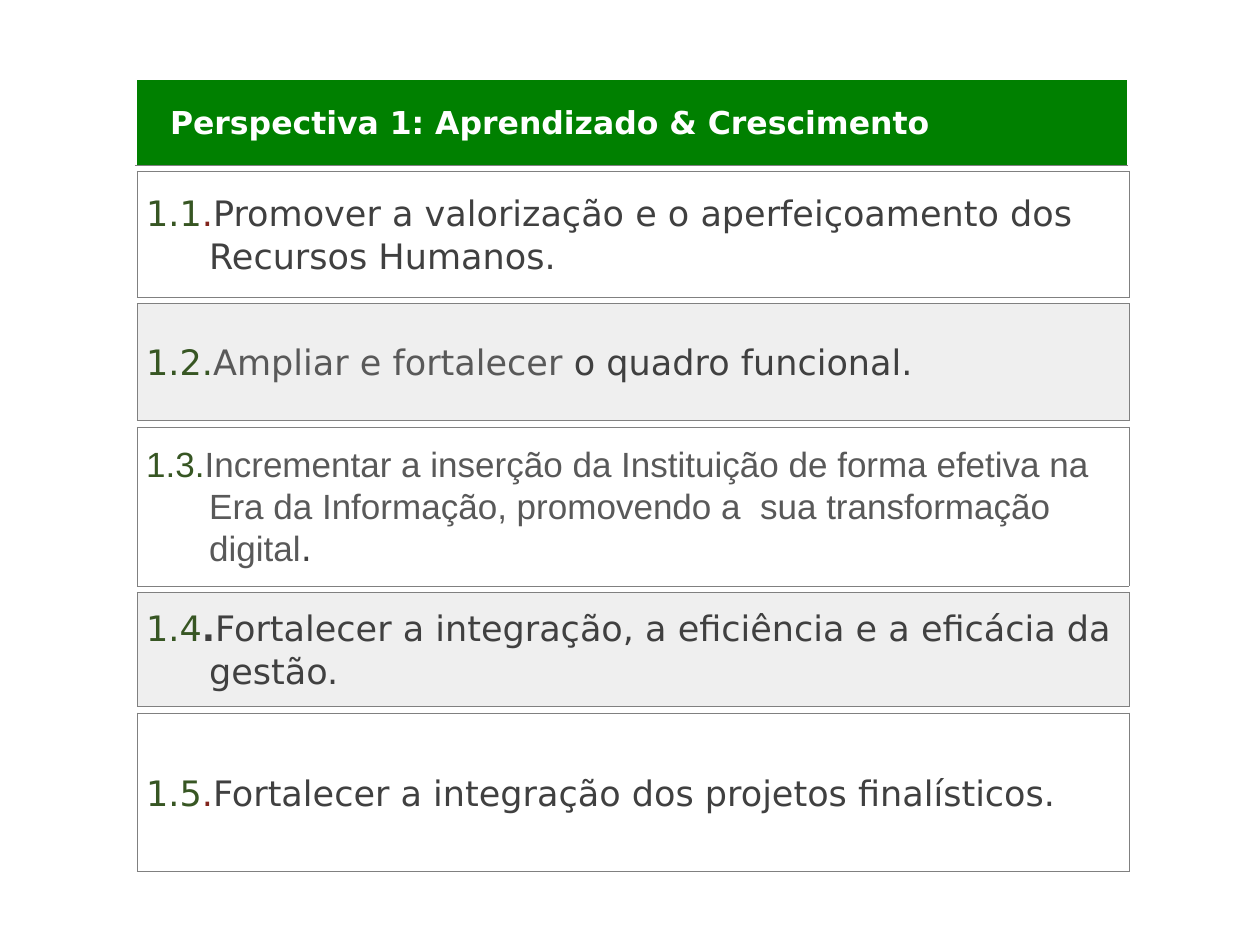
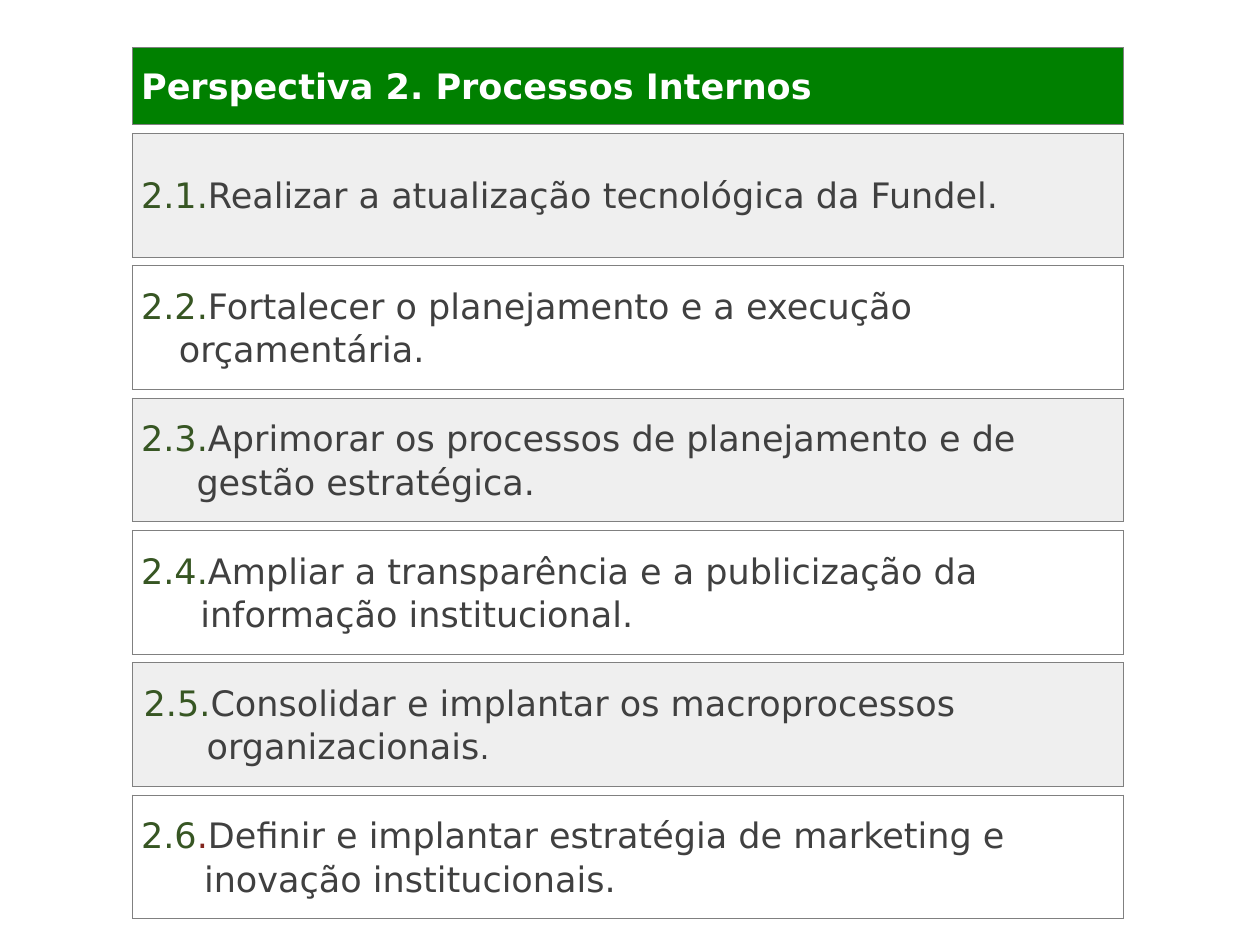
from lxml import etree
from pptx import Presentation
from pptx.dml.color import RGBColor
from pptx.enum.text import MSO_ANCHOR
from pptx.oxml.ns import qn
from pptx.util import Inches, Pt

MIDDLE = MSO_ANCHOR.MIDDLE
COLORS = {
    "header": "008000",
    "band": "D9D9D9",
    "white": "FFFFFF",
    "border": "808080",
    "number": "375623",
    "red": "82251D",
    "text": "404040",
    "soft": "595959",
}
FONT = "DejaVu Sans"
NUMBER_FONT = "Arial"
BAND_ALPHA = 40
BAR_WIDTH = 7.87
BORDER = ("border", 0.5)
GRID = {"L": BORDER, "R": BORDER, "T": BORDER, "B": BORDER}
WHITE_EDGE = ("white", 1)


def add_borders(cell, borders):
    properties = cell._tc.get_or_add_tcPr()
    for side, (color, width) in borders.items():
        line = etree.SubElement(properties, qn("a:ln" + side), w=str(Pt(width)))
        fill = etree.SubElement(line, qn("a:solidFill"))
        etree.SubElement(fill, qn("a:srgbClr"), val=COLORS[color])


def add_bar(slide, left, top, height, runs, indent, fill=None, borders=GRID):
    """Add a one-cell table; a run is (text, color, formatting that differs)."""
    table = slide.shapes.add_table(
        1, 1, Inches(left), Inches(top), Inches(BAR_WIDTH), Inches(height)).table
    table.first_row = False
    table.horz_banding = False
    cell = table.cell(0, 0)
    cell.vertical_anchor = MIDDLE
    cell.margin_left = cell.margin_right = Inches(0.07)
    cell.margin_top = cell.margin_bottom = 0
    add_borders(cell, borders)

    if fill:
        cell.fill.solid()
        cell.fill.fore_color.rgb = RGBColor.from_string(COLORS[fill])
    else:
        cell.fill.background()
    if fill == "band":
        color = cell._tc.tcPr.find(qn("a:solidFill")).find(qn("a:srgbClr"))
        etree.SubElement(color, qn("a:alpha"), val=str(BAND_ALPHA * 1000))

    paragraph = cell.text_frame.paragraphs[0]
    paragraph.line_spacing = 1.07
    margin, first_line = indent
    paragraph_properties = paragraph._p.get_or_add_pPr()
    paragraph_properties.set("marL", str(Inches(margin)))
    paragraph_properties.set("indent", str(Inches(first_line)))
    for text, color, style in runs:
        run = paragraph.add_run()
        run.text = text
        run.font.name = style.get("font", FONT)
        run.font.size = Pt(style.get("size", 20))
        run.font.bold = style.get("bold", False)
        run.font.color.rgb = RGBColor.from_string(COLORS[color])


PLAIN = {}
BOLD = {"bold": True}
ARIAL = {"font": NUMBER_FONT}

# Each goal: height, hanging indent, runs after the number
perspectives = [
    {
        "title": "Perspectiva 1: Aprendizado & Crescimento",
        "title_size": 18,
        "title_indent": (0, 0.2),
        "title_box": (1.08, 0.63, 0.68),
        "title_borders": {"L": WHITE_EDGE, "R": WHITE_EDGE, "T": WHITE_EDGE, "B": BORDER},
        "left": 1.09,
        "top": 1.36,
        "gap": 0.05,
        "first_band": 1,
        "goals": [
            (1.0, (0.5, -0.5), [
                ("1.1", "number", PLAIN), (".", "red", PLAIN),
                ("Promover a valorização e o aperfeiçoamento dos Recursos Humanos.",
                 "text", PLAIN)]),
            (0.93, (0.32, -0.32), [
                ("1.2.", "number", PLAIN), ("Ampliar e fortalecer ", "soft", PLAIN),
                ("o quadro funcional.", "text", PLAIN)]),
            (1.26, (0.5, -0.5), [
                ("1.3.", "number", ARIAL),
                ("Incrementar a inserção da Instituição de forma efetiva na Era da "
                 "Informação, promovendo a  sua transformação digital", "soft", ARIAL),
                (".", "text", PLAIN)]),
            (0.91, (0.5, -0.5), [
                ("1.4", "number", PLAIN), (".", "text", BOLD),
                ("Fortalecer a integração, a eficiência e a eficácia da gestão.",
                 "text", PLAIN)]),
            (1.26, (0.33, -0.33), [
                ("1.5", "number", PLAIN), (".", "red", PLAIN),
                ("Fortalecer a integração dos projetos finalísticos.", "text", PLAIN)]),
        ],
    },
    {
        "title": "Perspectiva 2. Processos Internos",
        "title_size": 20,
        "title_indent": (0, 0),
        "title_box": (1.05, 0.38, 0.61),
        "title_borders": GRID,
        "left": 1.05,
        "top": 1.06,
        "gap": 0.07,
        "first_band": 0,
        "goals": [
            (0.98, (0.5, -0.5), [
                ("2.1.", "number", PLAIN),
                ("Realizar a atualização tecnológica da Fundel.", "text", PLAIN)]),
            (0.98, (0.3, -0.3), [
                ("2.2.", "number", PLAIN),
                ("Fortalecer o planejamento e a execução orçamentária.", "text", PLAIN)]),
            (0.98, (0.44, -0.44), [
                ("2.3.", "number", PLAIN),
                ("Aprimorar os processos de planejamento e de gestão estratégica.",
                 "text", PLAIN)]),
            (0.98, (0.47, -0.47), [
                ("2.4.", "number", PLAIN),
                ("Ampliar a transparência e a publicização da informação institucional.",
                 "text", PLAIN)]),
            (0.98, (0.52, -0.5), [
                ("2.5.", "number", PLAIN),
                ("Consolidar e implantar os macroprocessos organizacionais", "text", PLAIN),
                (".", "text", {"size": 18})]),
            (0.98, (0.5, -0.5), [
                ("2.6", "number", PLAIN), (".", "red", PLAIN),
                ("Definir e implantar estratégia de marketing e inovação institucionais.",
                 "text", PLAIN)]),
        ],
    },
]

presentation = Presentation()
presentation.slide_width = Inches(10)
presentation.slide_height = Inches(7.5)
blank_layout = presentation.slide_layouts[6]

for perspective in perspectives:
    slide = presentation.slides.add_slide(blank_layout)

    # Green title bar
    left, top, height = perspective["title_box"]
    title_style = {"size": perspective["title_size"], "bold": True}
    add_bar(slide, left, top, height, [(perspective["title"], "white", title_style)],
            perspective["title_indent"], "header", perspective["title_borders"])

    # Goals stacked with equal gaps, every second one grey
    top = perspective["top"]
    for index, (height, indent, runs) in enumerate(perspective["goals"]):
        fill = "band" if index % 2 == perspective["first_band"] else None
        add_bar(slide, perspective["left"], top, height, runs, indent, fill)
        top += height + perspective["gap"]

presentation.save("out.pptx")
